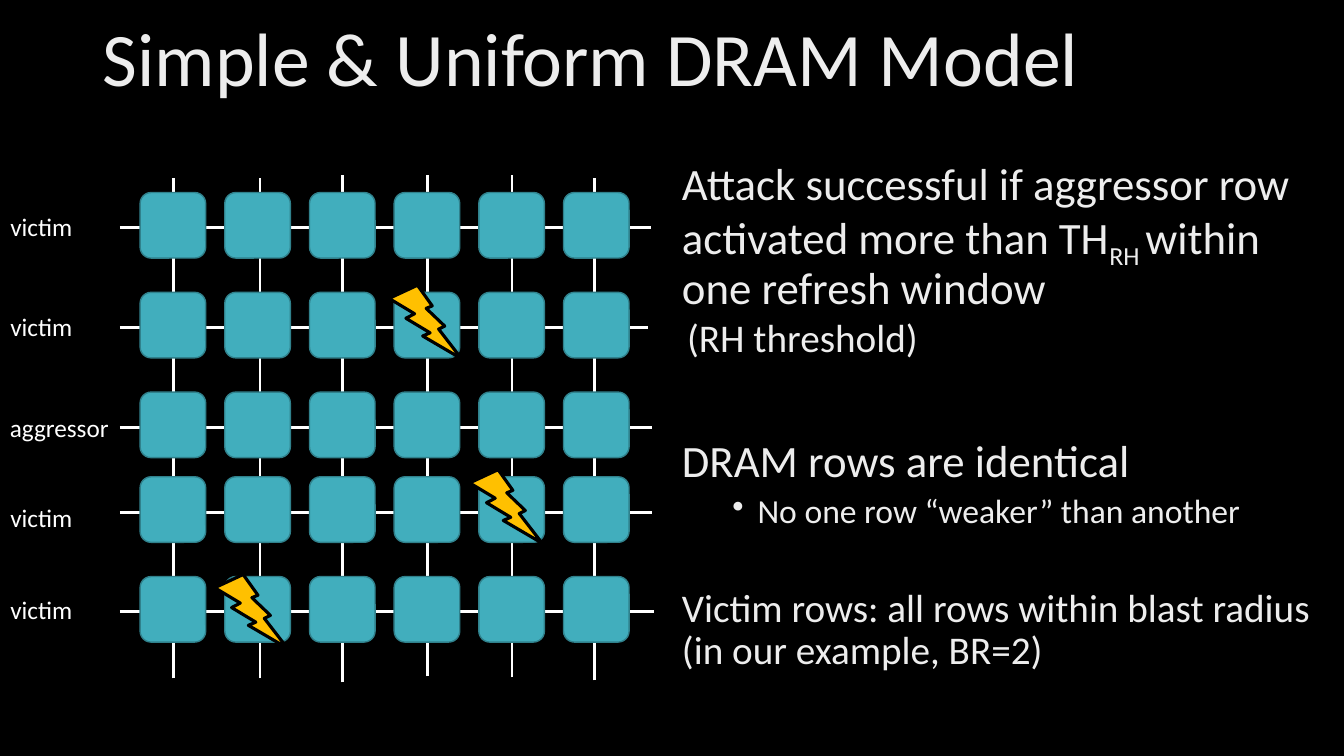
import pptx
import pptx.util
import pptx.dml.color
import pptx.enum.shapes
import pptx.enum.text
import pptx.oxml.ns
import lxml.etree

RGB = pptx.dml.color.RGBColor
BLACK = RGB(0x00, 0x00, 0x00)
WHITE = RGB(0xFF, 0xFF, 0xFF)
PALE = RGB(0xED, 0xED, 0xED)
TEAL = RGB(0x41, 0xAE, 0xBD)
EDGE = RGB(0x30, 0x81, 0x8C)
GOLD = RGB(0xFF, 0xC0, 0x00)

KIND = pptx.enum.shapes.MSO_SHAPE
ALIGN = pptx.enum.text.PP_ALIGN
FIT = pptx.enum.text.MSO_AUTO_SIZE
TOP = pptx.enum.text.MSO_ANCHOR.TOP
Pt = pptx.util.Pt
qn = pptx.oxml.ns.qn


class Deck:
    """Lengths are percent of the slide's width and height."""
    face = "Calibri"

    def __init__(self):
        self.file = pptx.Presentation()
        self.file.slide_width = pptx.util.Inches(13.33)
        self.file.slide_height = pptx.util.Inches(7.5)
        self.slide = self.file.slides.add_slide(self.file.slide_layouts[5])
        back = self.slide.background.fill
        back.solid()
        back.fore_color.rgb = BLACK

    def scale(self, x, y):
        return (round(self.file.slide_width * x / 100),
                round(self.file.slide_height * y / 100))

    def style(self, para, size, color):
        para.font.name = self.face
        para.font.size = Pt(size)
        para.font.color.rgb = color

    def title(self, x, y, w, h, text):
        box = self.slide.shapes.title
        box.left, box.top = self.scale(x, y)
        box.width, box.height = self.scale(w, h)
        frame = box.text_frame
        frame.text = text
        frame.vertical_anchor = TOP
        frame.auto_size = FIT.NONE
        para = frame.paragraphs[0]
        para.alignment = ALIGN.LEFT
        para.line_spacing = 0.9
        self.style(para, 54, PALE)

    def line(self, x1, y1, x2, y2):
        wire = self.slide.shapes.add_connector(
            pptx.enum.shapes.MSO_CONNECTOR.STRAIGHT,
            *self.scale(x1, y1), *self.scale(x2, y2))
        wire.line.color.rgb = WHITE
        wire.line.width = Pt(2)
        lxml.etree.SubElement(wire._element.spPr, qn("a:effectLst"))

    def shape(self, kind, x, y, w, h, fill, edge, width):
        item = self.slide.shapes.add_shape(
            kind, *self.scale(x, y), *self.scale(w, h))
        item.shadow.inherit = False
        item.fill.solid()
        item.fill.fore_color.rgb = fill
        item.line.color.rgb = edge
        item.line.width = Pt(width)

    def frame(self, x, y, w, h, wrap=True):
        box = self.slide.shapes.add_textbox(
            *self.scale(x, y), *self.scale(w, h))
        box.text_frame.word_wrap = wrap
        return box.text_frame

    def label(self, x, y, w, h, text, align):
        frame = self.frame(x, y, w, h, wrap=False)
        frame.auto_size = FIT.SHAPE_TO_FIT_TEXT
        para = frame.paragraphs[0]
        para.text = text
        para.alignment = align
        self.style(para, 18, WHITE)

    def para(self, para, size, gap=0, text="", bullet=False):
        para.text = text
        para.line_spacing = 0.9
        para.space_before = Pt(gap)
        if bullet:
            para.level = 1
            props = para._p.get_or_add_pPr()
            props.set("marL", str(pptx.util.Inches(0.75)))
            props.set("indent", str(pptx.util.Inches(-0.25)))
            lxml.etree.SubElement(props, qn("a:buChar"), char="•")
        self.style(para, size, PALE)

    def run(self, para, text, size=None, sub=False):
        run = para.add_run()
        run.text = text
        if size:
            run.font.size = Pt(size)
        if sub:
            run._r.get_or_add_rPr().set("baseline", "-25000")


def main():
    deck = Deck()
    deck.title(6.9, 2.13, 86.25, 19.33, "Simple & Uniform DRAM Model")

    # Column wires: x, top, bottom
    for x, top, end in ((12.9, 23.6, 89.73), (19.35, 23.6, 89.73),
                        (25.5, 23.2, 90.27), (31.8, 23.2, 89.47),
                        (38.1, 23.2, 89.6), (44.25, 23.6, 90)):
        deck.line(x, end, x, top)

    # Row wires with cells; the last two rows sit a little closer
    rows = ((48.45, "victim", 27.33), (48.23, "victim", 40.53),
            (48.53, "aggressor", 53.87), (48.53, "victim", 65.73),
            (48.68, "victim", 78))
    for row, (end, name, high) in enumerate(rows):
        top = 25.47 + 13.2 * row - (2 if row > 2 else 0)
        deck.line(8.93, top + 4.67, end, top + 4.67)
        for col in range(6):
            deck.shape(KIND.ROUNDED_RECTANGLE, 10.43 + 6.3 * col, top,
                       4.88, 8.67, TEAL, EDGE, 1)

    # Bit flips
    for x, y in ((28.95, 37.73), (34.95, 62.13), (15.98, 76)):
        deck.shape(KIND.LIGHTNING_BOLT, x, y, 5.4, 9.73, GOLD, BLACK, 2.25)

    # Row labels
    for end, name, high in rows:
        if name == "victim":
            deck.label(0, high, 6.15, 5.33, name, ALIGN.CENTER)
        else:
            deck.label(0, high, 8.93, 5.33, name, ALIGN.LEFT)

    # Explanation
    body = deck.frame(50, 20.8, 50, 70.53)
    first = body.paragraphs[0]
    deck.para(first, 32)
    deck.run(first, "Attack successful if aggressor row activated more than TH")
    deck.run(first, "RH ", sub=True)
    deck.run(first, "within one refresh window")
    first.add_line_break()
    deck.run(first, " ", 28, sub=True)
    deck.run(first, "(RH threshold)", 28)
    deck.para(body.add_paragraph(), 32, 55, "DRAM rows are identical")
    deck.para(body.add_paragraph(), 24, 5,
              "No one row “weaker” than another", bullet=True)
    deck.para(body.add_paragraph(), 28, 41,
              "Victim rows: all rows within blast radius\v"
              "(in our example, BR=2)")

    deck.file.save("out.pptx")


if __name__ == "__main__":
    main()
